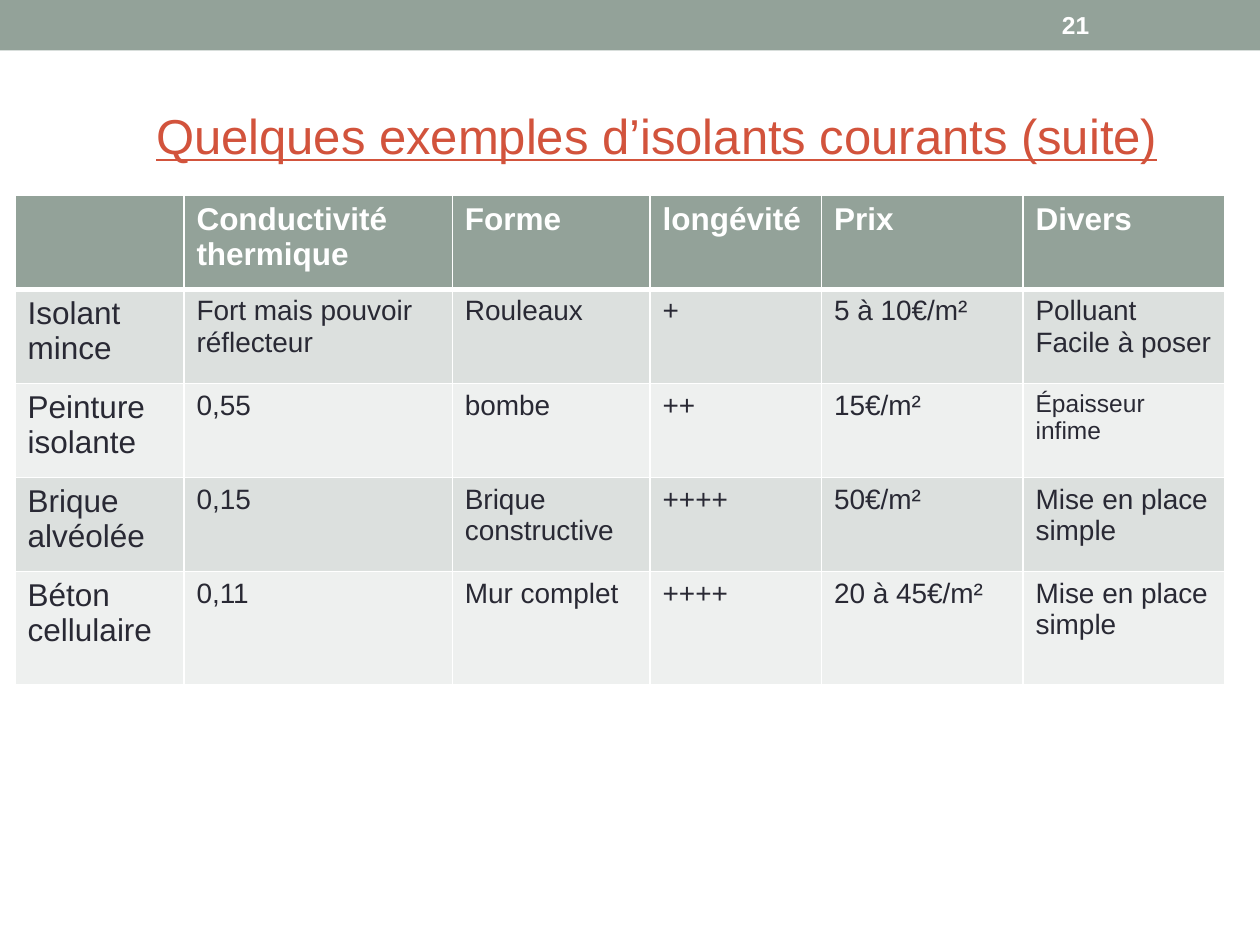
from dataclasses import dataclass

from lxml import etree
from pptx import Presentation
from pptx import util as u
from pptx.dml.color import RGBColor
from pptx.enum import shapes, text
from pptx.oxml import ns


@dataclass(frozen=True)
class Theme:
    font: str = "Arial"
    sage: str = "93A299"
    accent: str = "D2533C"
    ink: str = "292934"
    white: str = "FFFFFF"
    bands: tuple = ("DCE0DE", "EEF0EF")
    title: int = 28
    heading: int = 18
    body: int = 16
    small: int = 14
    rule: int = 1
    header_rule: int = 3


def write(tf, content, *, font, size, color, bold=False, underline=False):
    """Fill a text frame, one paragraph per line of content."""
    for i, line in enumerate(content.split("\n")):
        p = tf.paragraphs[0] if i == 0 else tf.add_paragraph()
        r = p.add_run()
        r.text = line
        f = r.font
        f.name, f.size, f.bold, f.underline = font, u.Pt(size), bold, underline
        f.color.rgb = RGBColor.from_string(color)


def set_borders(cell, color, **widths):
    """Draw cell borders; widths in points are keyed L, R, T, B."""
    tc_pr = cell._tc.get_or_add_tcPr()
    for side, width in widths.items():
        ln = etree.SubElement(tc_pr, ns.qn(f"a:ln{side}"), w=str(u.Pt(width)))
        fill = etree.SubElement(ln, ns.qn("a:solidFill"))
        etree.SubElement(fill, ns.qn("a:srgbClr"), val=color)


class SlideBuilder:
    """Places elements on a grid of 100 columns by 75 rows."""

    COLUMNS, ROWS = 100, 75

    def __init__(self, prs, theme):
        self.s = prs.slides.add_slide(prs.slide_layouts[6])
        self.theme = theme
        self.col = prs.slide_width / self.COLUMNS
        self.row = prs.slide_height / self.ROWS

    def box(self, x, y, w, h):
        return (round(x * self.col), round(y * self.row),
                round(w * self.col), round(h * self.row))

    def bar(self, *place, color):
        sp = self.s.shapes.add_shape(shapes.MSO_SHAPE.RECTANGLE, *self.box(*place))
        sp.shadow.inherit = False
        sp.fill.solid()
        sp.fill.fore_color.rgb = RGBColor.from_string(color)
        sp.line.fill.background()

    def label(self, *place, content, wrap=True, anchor=text.MSO_ANCHOR.TOP, **style):
        tf = self.s.shapes.add_textbox(*self.box(*place)).text_frame
        tf.word_wrap = wrap
        tf.vertical_anchor = anchor
        write(tf, content, font=self.theme.font, **style)

    def table(self, x, y, widths, heights, rows, sizes):
        """Add a banded table; sizes overrides the type size by (row, column)."""
        t = self.theme
        place = self.box(x, y, sum(widths), sum(heights))
        table = self.s.shapes.add_table(len(rows), len(widths), *place).table
        for column, width in zip(table.columns, widths):
            column.width = round(width * self.col)
        for row, height in zip(table.rows, heights):
            row.height = round(height * self.row)
        for i, row in enumerate(rows):
            for j, content in enumerate(row):
                cell, header = table.cell(i, j), i == 0
                set_borders(cell, t.white, L=t.rule, R=t.rule,
                            T=t.header_rule if i == 1 else t.rule,
                            B=t.header_rule if header else t.rule)
                cell.fill.solid()
                fill = t.sage if header else t.bands[(i - 1) % 2]
                cell.fill.fore_color.rgb = RGBColor.from_string(fill)
                default = t.heading if header or j == 0 else t.body
                if content:
                    write(cell.text_frame, content, font=t.font,
                          size=sizes.get((i, j), default), bold=header,
                          color=t.white if header else t.ink)


INSULATION = [
    ["", "Conductivité thermique", "Forme", "longévité", "Prix", "Divers"],
    ["Isolant mince", "Fort mais pouvoir réflecteur", "Rouleaux", "+",
     "5 à 10€/m²", "Polluant\nFacile à poser"],
    ["Peinture isolante", "0,55", "bombe", "++", "15€/m²", "Épaisseur infime"],
    ["Brique alvéolée", "0,15", "Brique constructive", "++++", "50€/m²",
     "Mise en place simple"],
    ["Béton cellulaire", "0,11", "Mur complet", "++++", "20 à 45€/m²",
     "Mise en place simple"],
]


def main():
    prs = Presentation()
    prs.slide_width, prs.slide_height = u.Inches(10), u.Inches(7.5)
    theme = Theme()
    slide = SlideBuilder(prs, theme)
    slide.bar(0, 0, slide.COLUMNS, 4, color=theme.sage)
    slide.label(11.4, 7.9, 82.5, 5.7, wrap=False,
                content="Quelques exemples d’isolants courants (suite)",
                size=theme.title, color=theme.accent, underline=True)
    slide.table(1.2, 15.5, widths=[13.4, 21.3, 15.7, 13.6, 16, 16],
                heights=[7.47] * 4 + [9], rows=INSULATION,
                sizes={(2, 5): theme.small})
    slide.label(83.3, 0.2, 11.7, 3.6, content="21", anchor=text.MSO_ANCHOR.MIDDLE,
                size=theme.small, color=theme.white, bold=True)
    prs.save("out.pptx")


if __name__ == "__main__":
    main()
